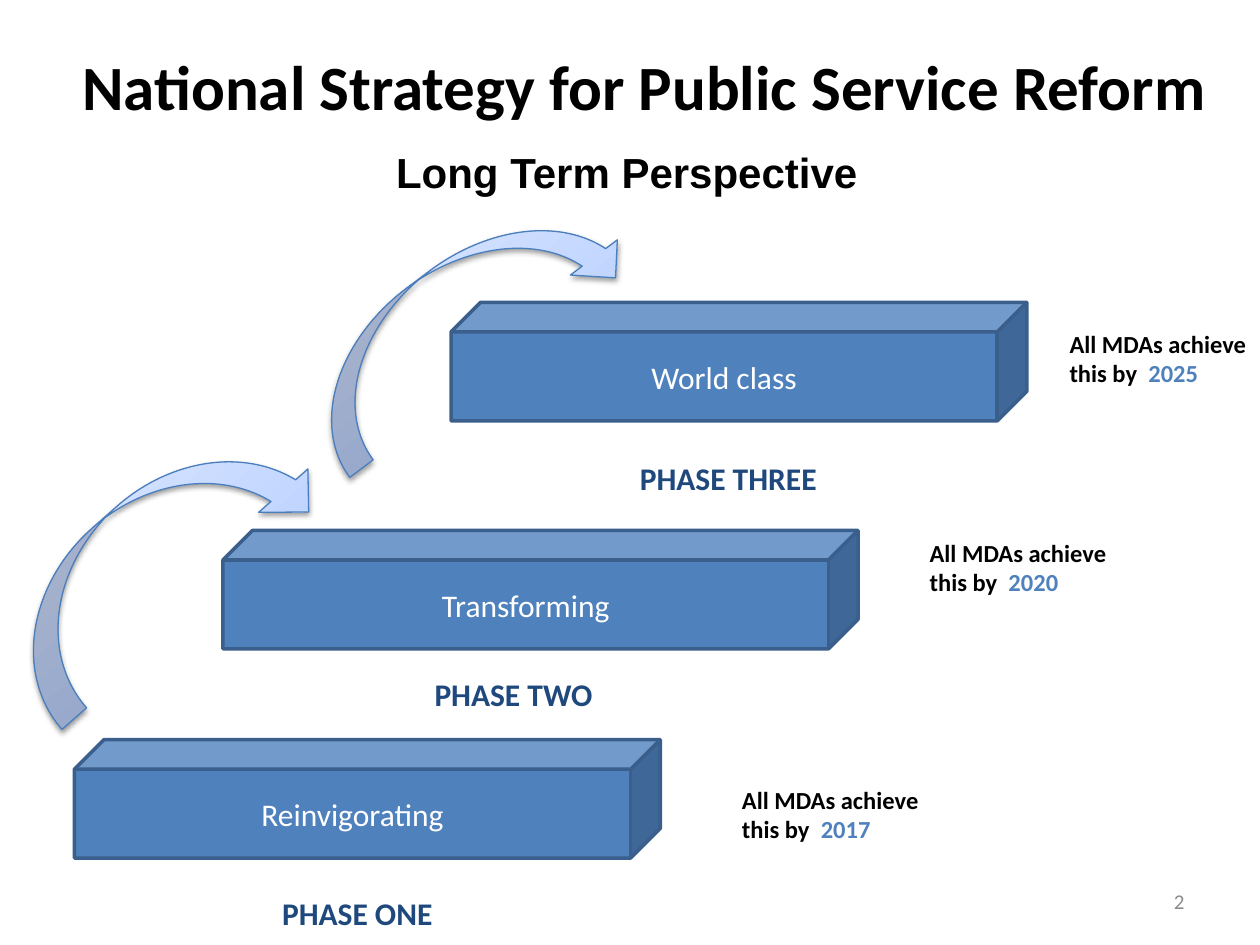
from lxml import etree
from pptx import Presentation
from pptx.dml.color import RGBColor
from pptx.enum.shapes import MSO_SHAPE
from pptx.enum.text import MSO_ANCHOR, PP_ALIGN
from pptx.oxml import parse_xml
from pptx.util import Inches, Pt

COLORS = {
    "black": "000000", "white": "FFFFFF", "navy": "1F497D", "blue": "4F81BD",
    "edge": "3A5F8C", "arrow_edge": "4B7EBC", "gray": "8C8C8C",
}
DRAWING_NS = "http://schemas.openxmlformats.org/drawingml/2006/main"
ARROW_GRADIENT = f"""<a:gradFill xmlns:a="{DRAWING_NS}" rotWithShape="1"><a:gsLst>
<a:gs pos="0"><a:srgbClr val="A4C4FF"/></a:gs>
<a:gs pos="35000"><a:srgbClr val="BFD4FF"/></a:gs>
<a:gs pos="100000"><a:srgbClr val="E6EEFF"/></a:gs>
</a:gsLst><a:lin ang="16200000" scaled="1"/></a:gradFill>"""
ARROW_SHADOW = """<a:outerShdw xmlns:a="%s" blurRad="40000" dist="20000" dir="5400000"
rotWithShape="0"><a:srgbClr val="000000"><a:alpha val="38000"/></a:srgbClr></a:outerShdw>""" % DRAWING_NS


def add_run(paragraph, text, size, color, bold=True, font="Calibri"):
    run = paragraph.add_run()
    run.text = text
    run.font.size = Pt(size)
    run.font.name = font
    run.font.bold = bold
    run.font.color.rgb = RGBColor.from_string(COLORS[color])


def add_text_frame(left, top, width, height, align=PP_ALIGN.LEFT, anchor=MSO_ANCHOR.TOP):
    box = slide.shapes.add_textbox(Inches(left), Inches(top), Inches(width), Inches(height))
    frame = box.text_frame
    frame.word_wrap = True
    frame.vertical_anchor = anchor
    frame.paragraphs[0].alignment = align
    return frame


prs = Presentation()
prs.slide_width, prs.slide_height = Inches(10), Inches(7.5)
slide = prs.slides.add_slide(prs.slide_layouts[6])

# Headings
subtitle = add_text_frame(0.31, 0.92, 9.33, 1.25, PP_ALIGN.CENTER, MSO_ANCHOR.MIDDLE)
subtitle.margin_bottom = Inches(0.42)
add_run(subtitle.paragraphs[0], "Long Term Perspective", 24, "black", font="Arial")
title = add_text_frame(0.43, 0.05, 9.37, 1.25, PP_ALIGN.CENTER, MSO_ANCHOR.MIDDLE)
add_run(title.paragraphs[0], "National Strategy for Public Service Reform", 36, "black")

# Phases: step name, (left, top, width), label, (left, top, width), year, (left, top)
phases = [
    ("Reinvigorating", (0.59, 5.87, 4.65), "PHASE ONE", (2.14, 7.05, 1.45), "2017", (5.79, 6.18)),
    ("Transforming", (1.77, 4.21, 5.04), "PHASE TWO", (3.35, 5.31, 1.65), "2020", (7.28, 4.22)),
    ("World class", (3.58, 2.4, 4.57), "PHASE THREE", (4.98, 3.59, 1.83), "2025", (8.39, 2.56)),
]
for step_name, step_place, label, label_place, year, target_place in phases:
    left, top, width = step_place
    step = slide.shapes.add_shape(
        MSO_SHAPE.CUBE, Inches(left), Inches(top), Inches(width), Inches(0.94))
    step.shadow.inherit = False
    step.fill.solid()
    step.fill.fore_color.rgb = RGBColor.from_string(COLORS["blue"])
    step.line.color.rgb = RGBColor.from_string(COLORS["edge"])
    step.line.width = Pt(2)
    step.text_frame.vertical_anchor = MSO_ANCHOR.MIDDLE
    step_text = step.text_frame.paragraphs[0]
    step_text.alignment = PP_ALIGN.CENTER
    add_run(step_text, step_name, 18, "white", bold=False)

    add_run(add_text_frame(*label_place, 0.4).paragraphs[0], label, 18, "navy")

    target = add_text_frame(*target_place, 1.73, 0.57).paragraphs[0]
    add_run(target, "All MDAs achieve this by  ", 14, "black")
    add_run(target, year, 14, "blue")

# Arrows leading up from one phase to the next
for left, top, height, rotation in [(-0.21, 3.93, 1.04, 318.6), (2.21, 2.09, 0.93, 323.1)]:
    arrow = slide.shapes.add_shape(
        MSO_SHAPE.CURVED_DOWN_ARROW, Inches(left), Inches(top), Inches(2.87), Inches(height))
    arrow.rotation = rotation
    arrow.line.color.rgb = RGBColor.from_string(COLORS["arrow_edge"])
    arrow.line.width = Pt(0.75)
    arrow.shadow.inherit = False
    properties = arrow._element.spPr
    properties.find(f"{{{DRAWING_NS}}}prstGeom").addnext(parse_xml(ARROW_GRADIENT))
    properties.find(f"{{{DRAWING_NS}}}effectLst").append(etree.fromstring(ARROW_SHADOW))

page_number = add_text_frame(7.17, 6.95, 2.33, 0.4, PP_ALIGN.RIGHT, MSO_ANCHOR.MIDDLE)
add_run(page_number.paragraphs[0], "2", 12, "gray", bold=False)

prs.save("out.pptx")
